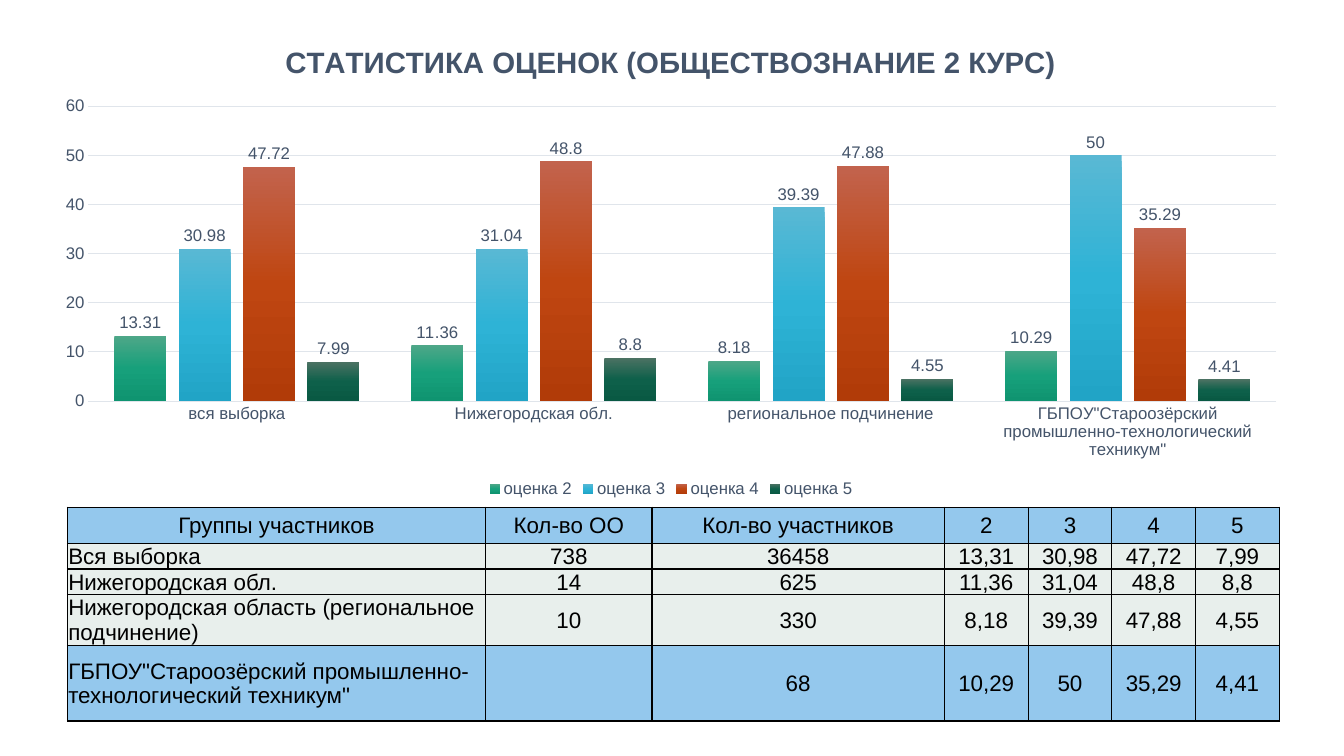
import pptx
import pptx.chart.data
import pptx.dml.color
import pptx.enum.chart
import pptx.enum.text
import pptx.oxml
import pptx.oxml.ns
import pptx.util

Cm, Pt = pptx.util.Cm, pptx.util.Pt
RGBColor = pptx.dml.color.RGBColor
XL = pptx.enum.chart
PP_ALIGN = pptx.enum.text.PP_ALIGN
DRAWING_NS = pptx.oxml.ns.nsdecls("a")
CHART_NS = pptx.oxml.ns.nsdecls("c")

BLACK = RGBColor(0x00, 0x00, 0x00)
SLATE = RGBColor(0x44, 0x54, 0x6A)
GRID = RGBColor(0xE0, 0xE5, 0xEB)
BLUE = RGBColor(0x94, 0xC8, 0xED)
PALE = RGBColor(0xE8, 0xEF, 0xEC)
GREENS = RGBColor(0x4E, 0xA7, 0x88), RGBColor(0x17, 0xA0, 0x7B), RGBColor(0x0F, 0x94, 0x70)
CYANS = RGBColor(0x59, 0xB8, 0xD4), RGBColor(0x2E, 0xB3, 0xD6), RGBColor(0x21, 0xA4, 0xC6)
RUSTS = RGBColor(0xC2, 0x63, 0x4D), RGBColor(0xBF, 0x46, 0x11), RGBColor(0xB1, 0x3B, 0x08)
PINES = RGBColor(0x4C, 0x72, 0x63), RGBColor(0x0E, 0x60, 0x4A), RGBColor(0x09, 0x59, 0x43)

TITLE = "СТАТИСТИКА ОЦЕНОК (ОБЩЕСТВОЗНАНИЕ 2 КУРС)"
COLLEGE = 'ГБПОУ"Староозёрский промышленно-технологический техникум"'
GROUPS = ["вся выборка", "Нижегородская обл.", "региональное подчинение", COLLEGE]
GRADES = [
    ("оценка 2", (13.31, 11.36, 8.18, 10.29), GREENS),
    ("оценка 3", (30.98, 31.04, 39.39, 50), CYANS),
    ("оценка 4", (47.72, 48.8, 47.88, 35.29), RUSTS),
    ("оценка 5", (7.99, 8.8, 4.55, 4.41), PINES),
]
HEADER = ["Группы участников", "Кол-во ОО", "Кол-во участников", "2", "3", "4", "5"]
PARTICIPANTS = [
    ("Вся выборка", "738", "36458"),
    ("Нижегородская обл.", "14", "625"),
    ("Нижегородская область (региональное подчинение)", "10", "330"),
    (COLLEGE, "", "68"),
]


class StatisticsSlide:
    font = "Arial"

    def __init__(self, deck):
        self.slide = deck.slides.add_slide(deck.slide_layouts[6])

    def style(self, font, size, color, bold=False):
        font.name, font.size, font.bold = self.font, Pt(size), bold
        font.color.rgb = color

    def place(self, parent, x, y, w=None, h=None):
        """Give a chart part a fixed place, in fractions of the chart."""
        for old in parent.findall(pptx.oxml.ns.qn("c:layout")):
            parent.remove(old)
        inner = '<c:layoutTarget val="inner"/>' if w else ""
        size = f'<c:w val="{w}"/><c:h val="{h}"/>' if w else ""
        layout = pptx.oxml.parse_xml(
            f'<c:layout {CHART_NS}><c:manualLayout>{inner}<c:xMode val="edge"/>'
            f'<c:yMode val="edge"/><c:x val="{x}"/><c:y val="{y}"/>{size}'
            "</c:manualLayout></c:layout>")
        title_text = parent.find(pptx.oxml.ns.qn("c:tx"))
        parent.insert(0 if title_text is None else 1, layout)

    def gradient(self, series, colors):
        stops = "".join(f'<a:gs pos="{i * 50000}"><a:srgbClr val="{color}"/></a:gs>'
                        for i, color in enumerate(colors))
        series.format.fill.background()
        properties = series.format.fill._xPr
        properties.replace(properties[0], pptx.oxml.parse_xml(
            f'<a:gradFill {DRAWING_NS}><a:gsLst>{stops}</a:gsLst>'
            '<a:lin ang="5400000" scaled="0"/></a:gradFill>'))

    def column_chart(self, title, groups, grades, left, top, width, height):
        data = pptx.chart.data.CategoryChartData()
        data.categories = groups
        for name, values, _ in grades:
            data.add_series(name, values)
        chart = self.slide.shapes.add_chart(
            XL.XL_CHART_TYPE.COLUMN_CLUSTERED, left, top, width, height, data).chart
        self.style(chart.font, 12, SLATE)

        # Title and legend
        chart.has_title = True
        heading = chart.chart_title.text_frame
        heading.text = title
        self.style(heading.paragraphs[0].runs[0].font, 21, SLATE, bold=True)
        chart.chart_title.include_in_layout = False
        self.place(chart.chart_title._element, 0.19, 0.033)
        chart.has_legend = True
        chart.legend.position = XL.XL_LEGEND_POSITION.BOTTOM
        chart.legend.include_in_layout = False
        self.style(chart.legend.font, 12, SLATE)

        # Axes
        for axis in (chart.category_axis, chart.value_axis):
            axis.major_tick_mark = axis.minor_tick_mark = XL.XL_TICK_MARK.NONE
            self.style(axis.tick_labels.font, 12, SLATE)
        scale = chart.value_axis
        scale.minimum_scale, scale.maximum_scale, scale.major_unit = 0, 60, 10
        scale.format.line.fill.background()
        for line in (chart.category_axis.format.line, scale.major_gridlines.format.line):
            line.color.rgb, line.width = GRID, Pt(0.75)

        # Columns and their values
        plot = chart.plots[0]
        plot.gap_width, plot.overlap, plot.vary_by_categories = 100, -24, False
        for series, (_, _, colors) in zip(plot.series, grades):
            self.gradient(series, colors)
            labels = series.data_labels
            labels.show_value = True
            labels.position = XL.XL_LABEL_POSITION.OUTSIDE_END
            self.style(labels.font, 12, SLATE)
        self.place(chart._chartSpace.chart.plotArea, 0.038, 0.175, 0.942, 0.615)

    def cell(self, cell, text, fill, align):
        cell.text = text
        cell.vertical_anchor = pptx.enum.text.MSO_ANCHOR.MIDDLE
        cell.margin_left = cell.margin_right = cell.margin_top = Cm(0.02)
        cell.margin_bottom = 0
        paragraph = cell.text_frame.paragraphs[0]
        paragraph.alignment = align
        for run in paragraph.runs:
            self.style(run.font, 16, BLACK)
        for side in "LRTB":
            cell._tc.get_or_add_tcPr().append(pptx.oxml.parse_xml(
                f'<a:ln{side} {DRAWING_NS} w="12700"><a:solidFill>'
                f'<a:srgbClr val="{BLACK}"/></a:solidFill></a:ln{side}>'))
        cell.fill.solid()
        cell.fill.fore_color.rgb = fill

    def table(self, rows, left, top, widths, heights):
        table = self.slide.shapes.add_table(
            len(rows), len(widths), left, top, sum(widths), sum(heights)).table
        for column, width in zip(table.columns, widths):
            column.width = width
        for r, (texts, height) in enumerate(zip(rows, heights)):
            table.rows[r].height = height
            fill = BLUE if r in (0, len(rows) - 1) else PALE
            for c, text in enumerate(texts):
                align = PP_ALIGN.LEFT if r and c == 0 else PP_ALIGN.CENTER
                self.cell(table.cell(r, c), text, fill, align)


def main():
    deck = pptx.Presentation()
    deck.slide_width, deck.slide_height = Cm(33.87), Cm(19.05)
    statistics = StatisticsSlide(deck)

    # Chart of grades by group
    statistics.column_chart(TITLE, GROUPS, GRADES,
                            Cm(1.02), Cm(0.56), Cm(31.78), Cm(12.09))

    # Table: participants, then the charted shares with a decimal comma
    shares = zip(*(values for _, values, _ in GRADES))
    rows = [HEADER] + [
        [*group, *(str(share).replace(".", ",") for share in group_shares)]
        for group, group_shares in zip(PARTICIPANTS, shares)]
    widths = [Cm(10.54), Cm(4.19), Cm(7.37)] + [Cm(2.11)] * 4
    heights = [Cm(0.91), Cm(0.65), Cm(0.65), Cm(1.28), Cm(1.9)]
    statistics.table(rows, Cm(1.7), Cm(12.78), widths, heights)

    deck.save("out.pptx")


if __name__ == "__main__":
    main()
